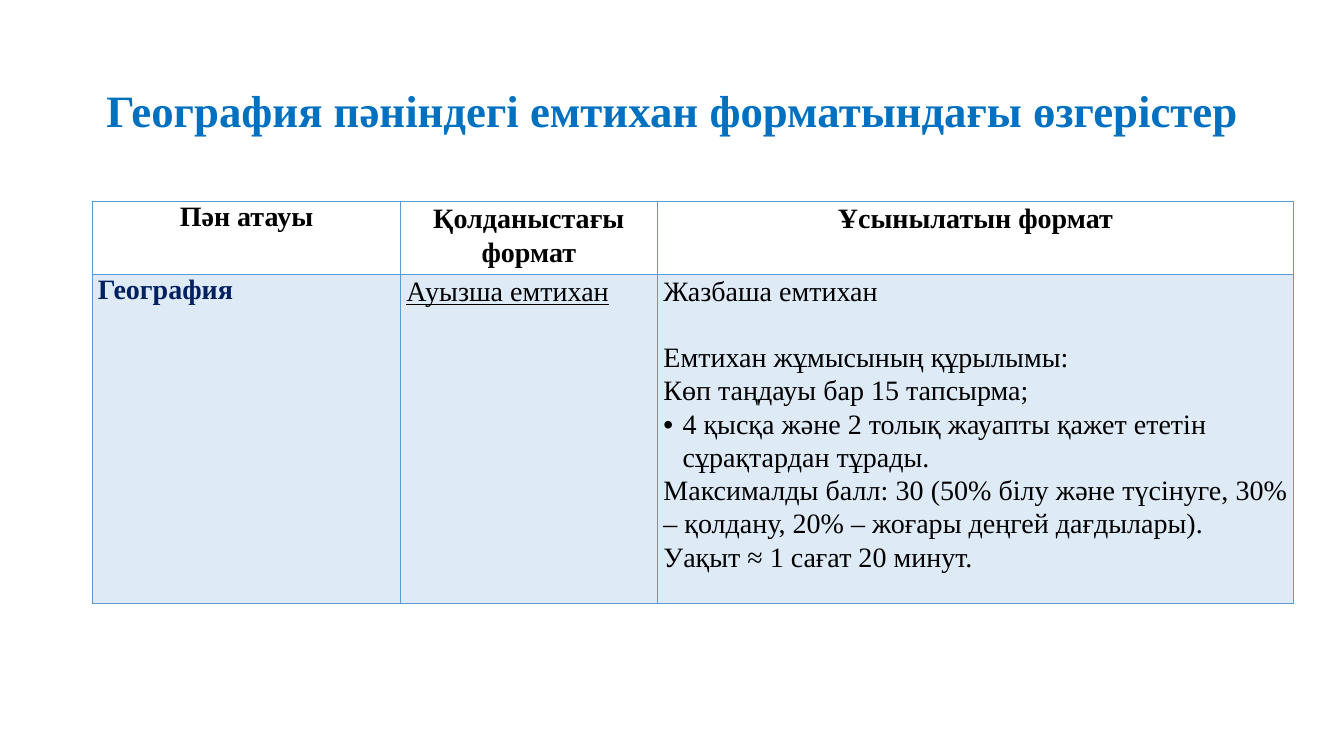
"""Builds the slide on changes to the geography exam format."""
from lxml import etree
from pptx import Presentation
from pptx import util as u
from pptx.dml.color import RGBColor
from pptx.enum import text
from pptx.oxml.ns import qn

TITLE = "География пәніндегі емтихан форматындағы өзгерістер"
HEADERS = ["Пән атауы", "Қолданыстағы формат", "Ұсынылатын формат"]
SUBJECT = ["География"]
CURRENT = ["Ауызша емтихан"]
PROPOSED = [
    "Жазбаша емтихан",
    "Емтихан жұмысының құрылымы:",
    "Көп таңдауы бар 15 тапсырма;",
    "4 қысқа және 2 толық жауапты қажет ететін сұрақтардан тұрады.",
    "Максималды балл: 30 (50% білу және түсінуге, 30% – қолдану, 20% – жоғары деңгей дағдылары).",
    "Уақыт ≈ 1 сағат 20 минут.",
]
ROWS = [[[h] for h in HEADERS], [SUBJECT, CURRENT, PROPOSED]]
WIDTHS = [3.05, 2.55, 6.31]
HEIGHTS = [0.72, 3.27]
FILLS = ["FFFFFF", "DEEBF7"]
BORDER = "5B9BD5"
SECTION, BULLETED, JUSTIFIED = 1, 3, (4, 5)


def rgb(value):
    return RGBColor.from_string(value)


def style(font, size, color, bold):
    font.name, font.size, font.bold = "Times New Roman", u.Pt(size), bold
    font.color.rgb = rgb(color)


def add_borders(cell):
    tc_pr = cell._tc.get_or_add_tcPr()
    for i, side in enumerate(("lnL", "lnR", "lnT", "lnB")):
        ln = etree.Element(qn(f"a:{side}"), w=str(u.Pt(1)))
        fill = etree.SubElement(ln, qn("a:solidFill"))
        etree.SubElement(fill, qn("a:srgbClr"), val=BORDER)
        tc_pr.insert(i, ln)


def add_bullet(p):
    p_pr = p._p.get_or_add_pPr()
    indent = u.Inches(0.19)
    p_pr.set("marL", str(indent))
    p_pr.set("indent", str(-indent))
    etree.SubElement(p_pr, qn("a:buFont"), typeface="Arial")
    etree.SubElement(p_pr, qn("a:buChar"), char="•")


def add_title(s):
    sp = s.shapes.add_textbox(*map(u.Inches, (0.92, 0.4, 11.5, 1.45)))
    tf = sp.text_frame
    tf.word_wrap, tf.vertical_anchor = True, text.MSO_ANCHOR.MIDDLE
    p = tf.paragraphs[0]
    p.text, p.alignment, p.line_spacing = TITLE, text.PP_ALIGN.CENTER, 0.9
    style(p.runs[0].font, 32, "0070C0", True)


def fill_cell(cell, row, col, lines):
    cell.margin_top = cell.margin_bottom = 0
    cell.margin_left = cell.margin_right = u.Inches(0.06 if col else 0.05)
    cell.fill.solid()
    cell.fill.fore_color.rgb = rgb(FILLS[row])
    add_borders(cell)
    tf = cell.text_frame
    for i, line in enumerate(lines):
        p = tf.paragraphs[0] if i == 0 else tf.add_paragraph()
        p.text = line
        p.alignment = text.PP_ALIGN.LEFT if row else text.PP_ALIGN.CENTER
        if col:
            p.line_spacing = 1.07
        if i == SECTION:
            p.space_before = u.Pt(23.7)
        if i == BULLETED:
            add_bullet(p)
        if i in JUSTIFIED:
            p.alignment = text.PP_ALIGN.JUSTIFY
        font = p.runs[0].font
        style(font, 20, "002060" if lines is SUBJECT else "000000", row == 0 or col == 0)
        font.underline = lines is CURRENT


def add_format_table(s):
    size = u.Inches(sum(WIDTHS)), u.Inches(sum(HEIGHTS))
    table = s.shapes.add_table(len(ROWS), len(WIDTHS), u.Inches(0.92), u.Inches(2), *size).table
    for column, width in zip(table.columns, WIDTHS):
        column.width = u.Inches(width)
    for row, height in enumerate(HEIGHTS):
        table.rows[row].height = u.Inches(height)
        for col, lines in enumerate(ROWS[row]):
            fill_cell(table.cell(row, col), row, col, lines)


def main():
    prs = Presentation()
    prs.slide_width, prs.slide_height = u.Inches(13.33), u.Inches(7.5)
    s = prs.slides.add_slide(prs.slide_layouts[6])
    add_title(s)
    add_format_table(s)
    prs.save("out.pptx")


if __name__ == "__main__":
    main()
